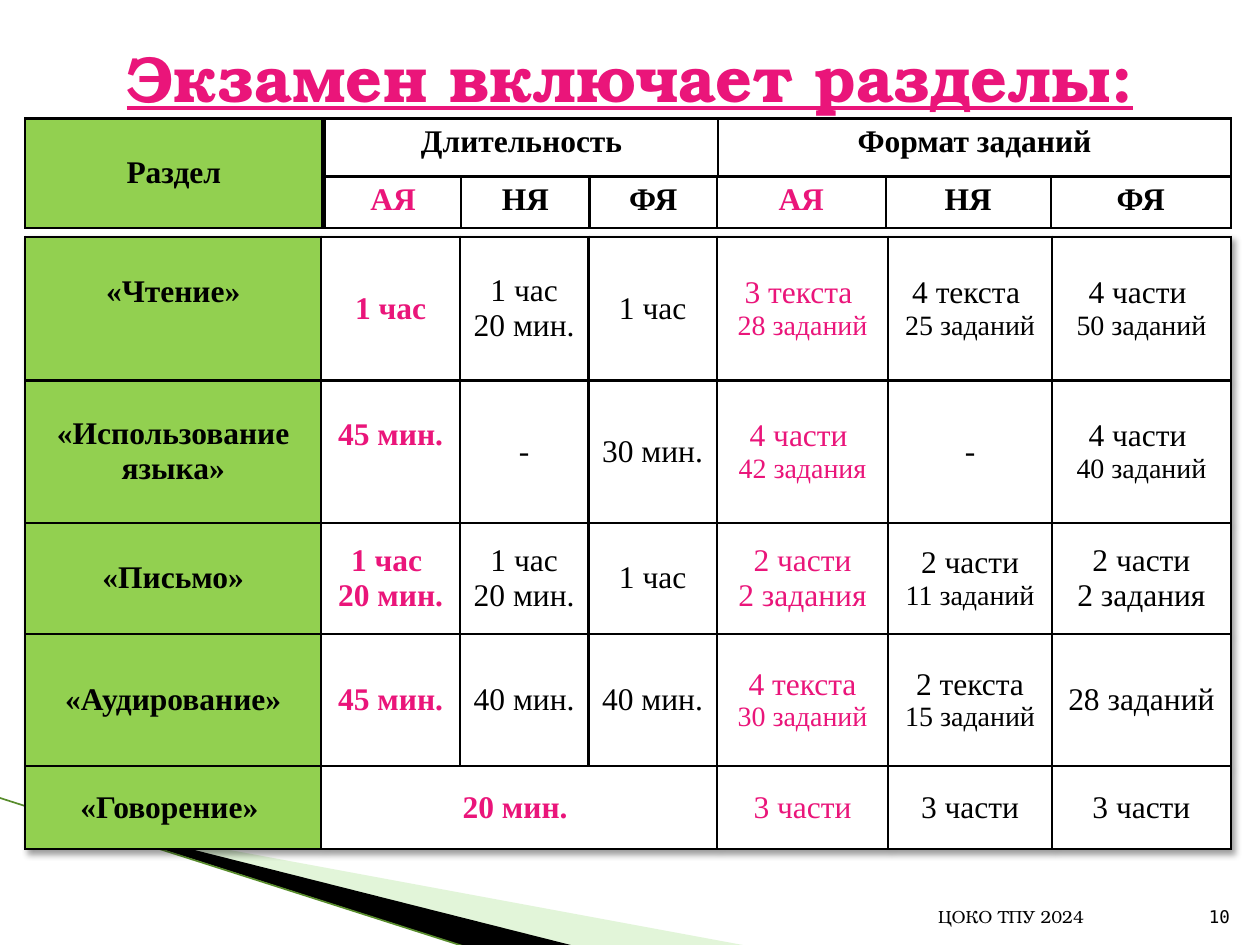
from lxml import etree
from pptx import Presentation
from pptx.dml.color import RGBColor
from pptx.enum.shapes import MSO_CONNECTOR as CONN
from pptx.enum.text import MSO_ANCHOR as ANCHOR, PP_ALIGN as ALIGN
from pptx.oxml import parse_xml
from pptx.oxml.ns import nsdecls, qn
from pptx.util import Inches, Pt

BLACK = RGBColor(0, 0, 0)
WHITE = RGBColor(255, 255, 255)
PINK = RGBColor(0xEA, 0x15, 0x7A)
GREEN = RGBColor(0x92, 0xD0, 0x50)
PALE = RGBColor(0xB8, 0xE7, 0xA1)
EDGE = RGBColor(0x58, 0x8C, 0x2C)

SERIF, TITLE, MONO = "Times New Roman", "TeX Gyre Bonum", "DejaVu Sans Mono"

EXAM = [
    ["«Чтение»", "1 час", "1 час 20 мин.", "1 час",
     "3 текста |28 заданий", "4 текста |25 заданий", "4 части |50 заданий"],
    ["«Использование языка»", "45 мин.", "-", "30 мин.",
     "4 части |42 задания", "-", "4 части |40 заданий"],
    ["«Письмо»", "1 час \n20 мин.", "1 час 20 мин.", "1 час",
     "2 части\n2 задания", "2 части|11 заданий", "2 части\n2 задания"],
    ["«Аудирование»", "45 мин.", "40 мин. ", "40 мин.",
     "4 текста|30 заданий", "2 текста|15 заданий", "28 заданий"],
    ["«Говорение» ", "20 мин. ", "", "", "3 части", "3 части", "3 части"],
]
RAISED = [(0, 0), (1, 1)]


def write(p, text, size=18, font=SERIF, color=BLACK, bold=False, underline=False, align=ALIGN.CENTER):
    p.alignment = align
    r = p.add_run()
    r.text = text
    f = r.font
    f.size, f.name, f.bold, f.underline = Pt(size), font, bold, underline
    f.color.rgb = color


def add_label(s, box, text, anchor, **fmt):
    tf = s.shapes.add_textbox(*map(Inches, box)).text_frame
    tf.word_wrap = True
    tf.vertical_anchor = anchor
    write(tf.paragraphs[0], text, **fmt)


def style_cell(cell, fill, anchor):
    tc_pr = cell._tc.get_or_add_tcPr()
    for side in ("lnL", "lnR", "lnT", "lnB"):
        tc_pr.append(parse_xml(
            f'<a:{side} {nsdecls("a")} w="{Pt(1.5)}"><a:solidFill>'
            f'<a:srgbClr val="{BLACK}"/></a:solidFill></a:{side}>'))
    cell.fill.solid()
    cell.fill.fore_color.rgb = fill
    cell.vertical_anchor = anchor


def fill_cell(cell, text, **fmt):
    tf = cell.text_frame
    main, _, small = text.partition("|")
    for i, line in enumerate(main.split("\n")):
        write(tf.add_paragraph() if i else tf.paragraphs[0], line, **fmt)
    if small:
        write(tf.add_paragraph(), small, size=16, **fmt)


def add_grid(s, box, cols, rows, cells, look, anchor=ANCHOR.TOP):
    table = s.shapes.add_table(len(rows), len(cols), *map(Inches, box)).table
    table.first_row = table.horz_banding = False
    for col, width in zip(table.columns, cols):
        col.width = Inches(width)
    for row, height in zip(table.rows, rows):
        row.height = Inches(height)
    for i, line in enumerate(cells):
        for j, text in enumerate(line):
            fill, color, bold = look(j)
            style_cell(table.cell(i, j), fill, anchor)
            if text:
                fill_cell(table.cell(i, j), text, color=color, bold=bold)
    return table


def set_frame(sp, box):
    x, y, w, h = map(Inches, box)
    dx, dy = sp.left - x, sp.top - y
    sp.left, sp.top, sp.width, sp.height = x, y, w, h
    outline = next(sp._element.iter(qn("a:path")))
    outline.set("w", str(w))
    outline.set("h", str(h))
    for pt in outline.iter(qn("a:pt")):
        pt.set("x", str(int(pt.get("x")) + dx))
        pt.set("y", str(int(pt.get("y")) + dy))


def add_wedge(s, box, points, color, alpha=100):
    pts = [(Inches(x), Inches(y)) for x, y in points]
    fb = s.shapes.build_freeform(*pts[0])
    fb.add_line_segments(pts[1:])
    sp = fb.convert_to_shape()
    set_frame(sp, box)
    sp.shadow.inherit = False
    sp.line.fill.background()
    sp.fill.solid()
    sp.fill.fore_color.rgb = color
    clr = sp.fill._xPr.find(qn("a:solidFill"))[0]
    etree.SubElement(clr, qn("a:alpha"), val=str(alpha * 1000))


def add_decor(s):
    add_wedge(s, (0.78, 5.47, 4.16, 1.58),
              [(0.55, 6.51), (5.95, 7.51), (4.56, 7.51), (0.55, 6.5)], PALE, 40)
    add_wedge(s, (-0.06, 6.33, 4.16, 0.92),
              [(0.53, 6.49), (4.57, 7.51), (3.72, 7.52), (0.54, 6.5)], BLACK)
    ends = map(Inches, (-0.01, 6.33, 3.71, 7.52))
    line = s.shapes.add_connector(CONN.STRAIGHT, *ends)
    line.line.color.rgb = EDGE
    line.line.width = Pt(0.95)
    etree.SubElement(line._element.spPr, qn("a:effectLst"))


def add_header(s, x, y):
    left = x + 2.38
    add_grid(s, (left, y, 7.19, 0.46), [3.12, 4.07], [0.46],
             [["Длительность", "Формат заданий"]], lambda j: (WHITE, BLACK, True))
    add_grid(s, (left, y + 0.46, 7.19, 0.41), [1.08, 1.02, 1.01, 1.34, 1.31, 1.43], [0.41],
             [["АЯ", "НЯ", "ФЯ"] * 2], lambda j: (WHITE, BLACK if j % 3 else PINK, True))
    add_grid(s, (x, y, 2.36, 0.87), [2.36], [0.87], [["Раздел"]],
             lambda j: (GREEN, BLACK, True), ANCHOR.MIDDLE)


def add_exam(s, box):
    def look(j):
        return (WHITE if j else GREEN, PINK if j in (1, 4) else BLACK, j < 2)

    table = add_grid(s, box, [2.35, 1.1, 1.02, 1.02, 1.36, 1.3, 1.42],
                     [1.14, 1.13, 0.88, 1.05, 0.66], EXAM, look, ANCHOR.MIDDLE)
    table.cell(4, 1).merge(table.cell(4, 3))
    for i, j in RAISED:
        table.cell(i, j).margin_bottom = Inches(0.32)
    table._tbl.tblPr.insert(0, parse_xml(
        f'<a:effectLst {nsdecls("a")}><a:outerShdw blurRad="50800" dist="38100" dir="2700000">'
        f'<a:srgbClr val="{BLACK}"><a:alpha val="40000"/></a:srgbClr></a:outerShdw></a:effectLst>'))


def main():
    prs = Presentation()
    prs.slide_width, prs.slide_height = Inches(10), Inches(7.5)
    s = prs.slides.add_slide(prs.slide_layouts[6])
    add_decor(s)
    add_label(s, (9.16, 7.01, 0.7, 0.4), "10", ANCHOR.BOTTOM,
              size=10, font=MONO, align=ALIGN.RIGHT)
    add_label(s, (0.5, 0.3, 9, 0.61), "Экзамен включает разделы:", ANCHOR.MIDDLE,
              size=36.9, font=TITLE, color=PINK, bold=True, underline=True)
    add_exam(s, (0.2, 1.88, 9.57, 4.86))
    add_header(s, 0.2, 0.94)
    add_label(s, (4.79, 7.01, 3.91, 0.4), "ЦОКО ТПУ 2024", ANCHOR.BOTTOM,
              size=10, font=TITLE, align=ALIGN.RIGHT)
    prs.save("out.pptx")


if __name__ == "__main__":
    main()
